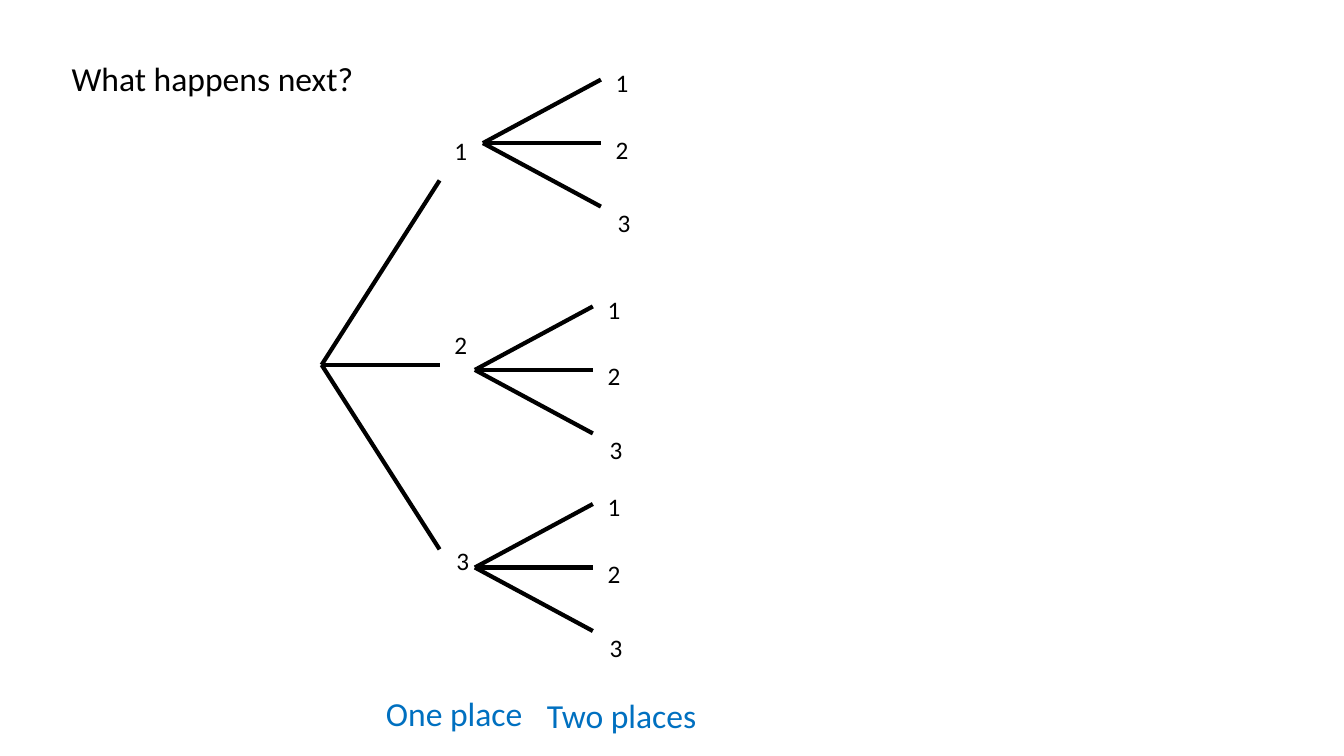
import pptx
import pptx.util
import pptx.dml.color
import pptx.enum.shapes
import pptx.enum.text
import lxml.etree
from dataclasses import dataclass

Inches = pptx.util.Inches
Align = pptx.enum.text.PP_ALIGN

QUESTION = "What happens next?"
OUTCOMES = ["1", "2", "3"]

# Captions under the tree: text, (left, top, width, height)
CAPTIONS = [
    ("One place", (3.68, 6.83, 1.65, 0.5)),
    ("Two places", (5.12, 6.84, 2.09, 0.5)),
]

# Branch ends and label tops are measured down from the hub
FIRST_FORK = {"spread": 1.83, "label_tops": (-2.33, -0.4, 1.74)}
SECOND_FORK = {"spread": 0.63, "label_tops": (-0.8, -0.14, 0.59)}
FORKS = [
    ((3.19, 3.62), FIRST_FORK),
    ((4.79, 1.42), SECOND_FORK),
    ((4.71, 3.67), SECOND_FORK),
    ((4.71, 5.63), SECOND_FORK),
]
BRANCH_WIDTH = 1.17
LABEL_SHIFTS = (0, 0, 0.02)
LABEL_SIZE = (0.42, 0.4)


@dataclass
class Theme:
    font: str = "Calibri"
    ink: str = "000000"
    accent: str = "0070C0"
    label_pt: int = 18
    heading_pt: int = 24
    branch_pt: int = 3


THEME = Theme()


def rgb(value):
    return pptx.dml.color.RGBColor.from_string(value)


def write(box, text, size, color, align):
    frame = box.text_frame
    frame.word_wrap = True
    frame.vertical_anchor = pptx.enum.text.MSO_ANCHOR.TOP
    paragraph = frame.paragraphs[0]
    paragraph.text = text
    paragraph.alignment = align
    paragraph.font.name = THEME.font
    paragraph.font.size = pptx.util.Pt(size)
    paragraph.font.color.rgb = rgb(color)


def add_branch(group, start, end):
    branch = group.shapes.add_connector(
        pptx.enum.shapes.MSO_CONNECTOR.STRAIGHT,
        *(Inches(value) for value in (*start, *end)))
    branch.line.color.rgb = rgb(THEME.ink)
    branch.line.width = pptx.util.Pt(THEME.branch_pt)
    lxml.etree.SubElement(branch._element.spPr, pptx.oxml.ns.qn("a:effectLst"))


def add_fork(slide, hub, spread, label_tops):
    """Draw one grouped fork: a branch and a label for each outcome."""
    group = slide.shapes.add_group_shape()
    x, y = hub
    end_x = x + BRANCH_WIDTH
    for drop in (0, -spread, spread):
        add_branch(group, hub, (end_x, y + drop))
    for outcome, shift, top in zip(OUTCOMES, LABEL_SHIFTS, label_tops):
        place = (end_x + shift, y + top, *LABEL_SIZE)
        label = group.shapes.add_textbox(*map(Inches, place))
        write(label, outcome, THEME.label_pt, THEME.ink, Align.CENTER)


def main():
    deck = pptx.Presentation()
    deck.slide_width, deck.slide_height = Inches(13.33), Inches(7.5)
    slide = deck.slides.add_slide(deck.slide_layouts.get_by_name("Title Only"))

    question = slide.shapes.title
    question.left, question.top = Inches(0.61), Inches(0.52)
    question.width, question.height = Inches(5.16), Inches(0.5)
    write(question, QUESTION, THEME.heading_pt, THEME.ink, Align.LEFT)

    for hub, fork in FORKS:
        add_fork(slide, hub, **fork)
    for text, place in CAPTIONS:
        caption = slide.shapes.add_textbox(*map(Inches, place))
        write(caption, text, THEME.heading_pt, THEME.accent, Align.CENTER)

    deck.save("out.pptx")


if __name__ == "__main__":
    main()
